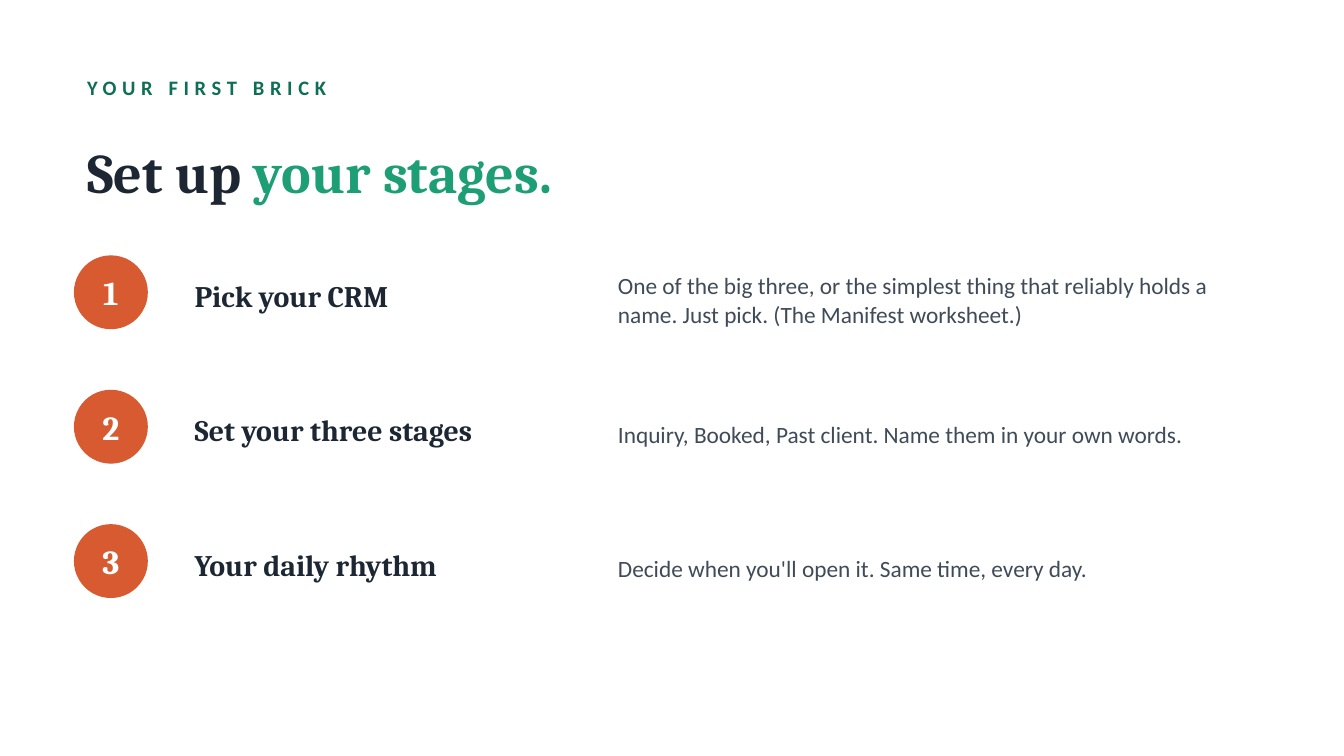
"""Build the slide of three numbered steps for setting up stages."""
from pptx import Presentation
from pptx.dml.color import RGBColor
from pptx.enum.shapes import MSO_SHAPE
from pptx.enum.text import MSO_ANCHOR, PP_ALIGN
from pptx.util import Inches, Pt

OVAL = MSO_SHAPE.OVAL
MIDDLE = MSO_ANCHOR.MIDDLE
CENTER = PP_ALIGN.CENTER

SERIF, SANS = "Cambria", "Calibri"
INK, GREEN, DARK_GREEN = "1C2733", "1D9E75", "0F6E56"
ORANGE, SLATE, WHITE = "D85A30", "3F4B59", "FFFFFF"

EYEBROW = "YOUR FIRST BRICK"
TITLE = [("Set up ", INK), ("your stages.", GREEN)]
STEPS = [
    ("Pick your CRM",
     "One of the big three, or the simplest thing that reliably holds a name. "
     "Just pick. (The Manifest worksheet.)"),
    ("Set your three stages",
     "Inquiry, Booked, Past client. Name them in your own words."),
    ("Your daily rhythm",
     "Decide when you'll open it. Same time, every day."),
]

WIDTH = 10
HEIGHT = WIDTH * 9 / 16
LEFT, BADGE = 0.55, 0.55
FIRST_ROW, ROW_PITCH = 1.85, 1.0


def color(value):
    return RGBColor.from_string(value)


def add_text(page, place, spans, size, face, bold=True):
    box = page.shapes.add_textbox(*map(Inches, place))
    frame = box.text_frame
    frame.word_wrap = True
    frame.vertical_anchor = MIDDLE
    para = frame.paragraphs[0]
    para.font.size = Pt(size)
    para.font.name = face
    para.font.bold = bold
    for text, tint in spans:
        span = para.add_run()
        span.text = text
        span.font.color.rgb = color(tint)
    return para


def add_badge(page, top, number):
    place = (LEFT, top, BADGE, BADGE)
    badge = page.shapes.add_shape(OVAL, *map(Inches, place))
    badge.shadow.inherit = False
    badge.fill.solid()
    badge.fill.fore_color.rgb = color(ORANGE)
    badge.line.fill.background()
    para = add_text(page, place, [(str(number), WHITE)], 18, SERIF)
    para.alignment = CENTER


def main():
    deck = Presentation()
    deck.slide_width, deck.slide_height = Inches(WIDTH), Inches(HEIGHT)
    page = deck.slides.add_slide(deck.slide_layouts[6])

    eyebrow = add_text(page, (LEFT, 0.5, 8.9, 0.3), [(EYEBROW, DARK_GREEN)], 11, SANS)
    eyebrow.runs[0].font._element.set("spc", "300")
    add_text(page, (LEFT, 0.85, 8.9, 0.85), TITLE, 30, SERIF)

    for index, (heading, detail) in enumerate(STEPS):
        top = FIRST_ROW + index * ROW_PITCH
        add_badge(page, top + 0.05, index + 1)
        add_text(page, (1.35, top, 3, 0.7), [(heading, INK)], 16, SERIF)
        para = add_text(page, (4.5, top, 5, 0.75), [(detail, SLATE)], 12.5, SANS, False)
        para.line_spacing = 1.05

    deck.save("out.pptx")


if __name__ == "__main__":
    main()
